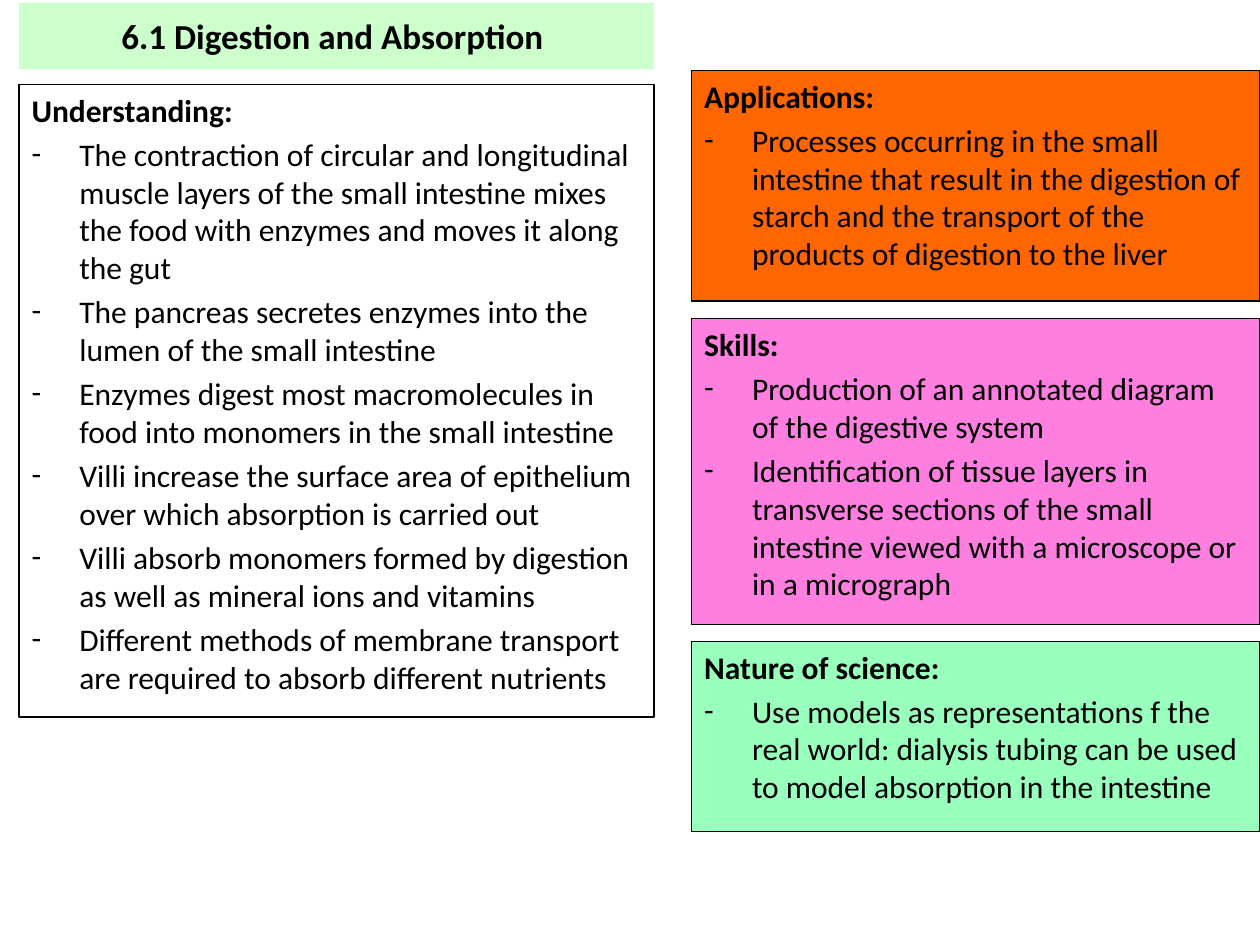
from lxml.etree import SubElement
from pptx import Presentation
from pptx.dml.color import RGBColor
from pptx.enum.shapes import MSO_SHAPE as Shape
from pptx.enum.text import MSO_ANCHOR as Anchor, MSO_AUTO_SIZE as AutoSize, PP_ALIGN as Align
from pptx.oxml.ns import qn
from pptx.util import Inches, Pt

LEFT_COLUMN = (0.15, 5.04)
RIGHT_COLUMN = (5.49, 4.51)

UNDERSTANDING = [
    "The contraction of circular and longitudinal muscle layers of the small intestine mixes the food with enzymes and moves it along the gut",
    "The pancreas secretes enzymes into the lumen of the small intestine",
    "Enzymes digest most macromolecules in food into monomers in the small intestine",
    "Villi increase the surface area of epithelium over which absorption is carried out",
    "Villi absorb monomers formed by digestion as well as mineral ions and vitamins",
    "Different methods of membrane transport are required to absorb different nutrients",
]
PANELS = [
    (0.56, 1.83, "FF6600", "Applications:", [
        "Processes occurring in the small intestine that result in the digestion of starch and the transport of the products of digestion to the liver",
    ]),
    (2.53, 2.43, "FF7FE1", "Skills:", [
        "Production of an annotated diagram of the digestive system",
        "Identification of tissue layers in transverse sections of the small intestine viewed with a microscope or in a micrograph",
    ]),
    (5.09, 1.51, "98FFBC", "Nature of science:", [
        "Use models as representations f the real world: dialysis tubing can be used to model absorption in the intestine",
    ]),
]


def color(value):
    return RGBColor.from_string(value)


class SyllabusSlide:
    font_name = "Calibri"
    ink = "000000"
    title_size = 20
    text_size = 18
    indent = 0.38

    def __init__(self, presentation):
        self.slide = presentation.slides.add_slide(presentation.slide_layouts[1])

    def place(self, shape, column, top, height):
        left, width = column
        shape.left, shape.top = Inches(left), Inches(top)
        shape.width, shape.height = Inches(width), Inches(height)

    def style_font(self, paragraph, size, bold):
        font = paragraph.font
        font.name = self.font_name
        font.size = Pt(size)
        font.bold = bold
        font.color.rgb = color(self.ink)

    def title(self, text, column, top, height, fill):
        shape = self.slide.shapes.title
        self.place(shape, column, top, height)
        shape.fill.solid()
        shape.fill.fore_color.rgb = color(fill)
        frame = shape.text_frame
        frame.text = text
        frame.auto_size = AutoSize.NONE
        frame.vertical_anchor = Anchor.MIDDLE
        paragraph = frame.paragraphs[0]
        paragraph.alignment = Align.CENTER
        self.style_font(paragraph, self.title_size, True)

    def body(self, column, top, height, heading, items):
        shape = self.slide.placeholders[1]
        self.place(shape, column, top, height)
        self.outline(shape)
        self.heading_and_list(shape, heading, items)

    def panel(self, column, top, height, fill, heading, items):
        left, width = column
        shape = self.slide.shapes.add_shape(
            Shape.RECTANGLE, Inches(left), Inches(top), Inches(width), Inches(height))
        shape.shadow.inherit = False
        shape.fill.solid()
        shape.fill.fore_color.rgb = color(fill)
        self.outline(shape)
        self.heading_and_list(shape, heading, items)

    def outline(self, shape):
        shape.line.color.rgb = color(self.ink)
        shape.line.width = Pt(0.75)

    def heading_and_list(self, shape, heading, items):
        frame = shape.text_frame
        frame.text = "\n".join([heading, *items])
        frame.word_wrap = True
        frame.auto_size = AutoSize.NONE
        frame.vertical_anchor = Anchor.TOP
        for index, paragraph in enumerate(frame.paragraphs):
            paragraph.alignment = Align.LEFT
            paragraph.space_before = Pt(self.text_size * 0.2)
            self.bullet(paragraph, index > 0)
            self.style_font(paragraph, self.text_size, index == 0)

    def bullet(self, paragraph, shown):
        properties = paragraph._p.get_or_add_pPr()
        indent = Inches(self.indent) if shown else 0
        properties.set("marL", str(indent))
        properties.set("indent", str(-indent))
        if shown:
            SubElement(properties, qn("a:buFont"), typeface=self.font_name)
            SubElement(properties, qn("a:buChar"), char="-")
        else:
            SubElement(properties, qn("a:buNone"))


def main():
    presentation = Presentation()
    presentation.slide_width = Inches(10)
    presentation.slide_height = Inches(7.5)
    syllabus = SyllabusSlide(presentation)
    syllabus.title("6.1 Digestion and Absorption ", LEFT_COLUMN, 0.02, 0.53, "CCFFCC")
    syllabus.body(LEFT_COLUMN, 0.67, 5.02, "Understanding:", UNDERSTANDING)
    for top, height, fill, heading, items in PANELS:
        syllabus.panel(RIGHT_COLUMN, top, height, fill, heading, items)
    presentation.save("out.pptx")


if __name__ == "__main__":
    main()
